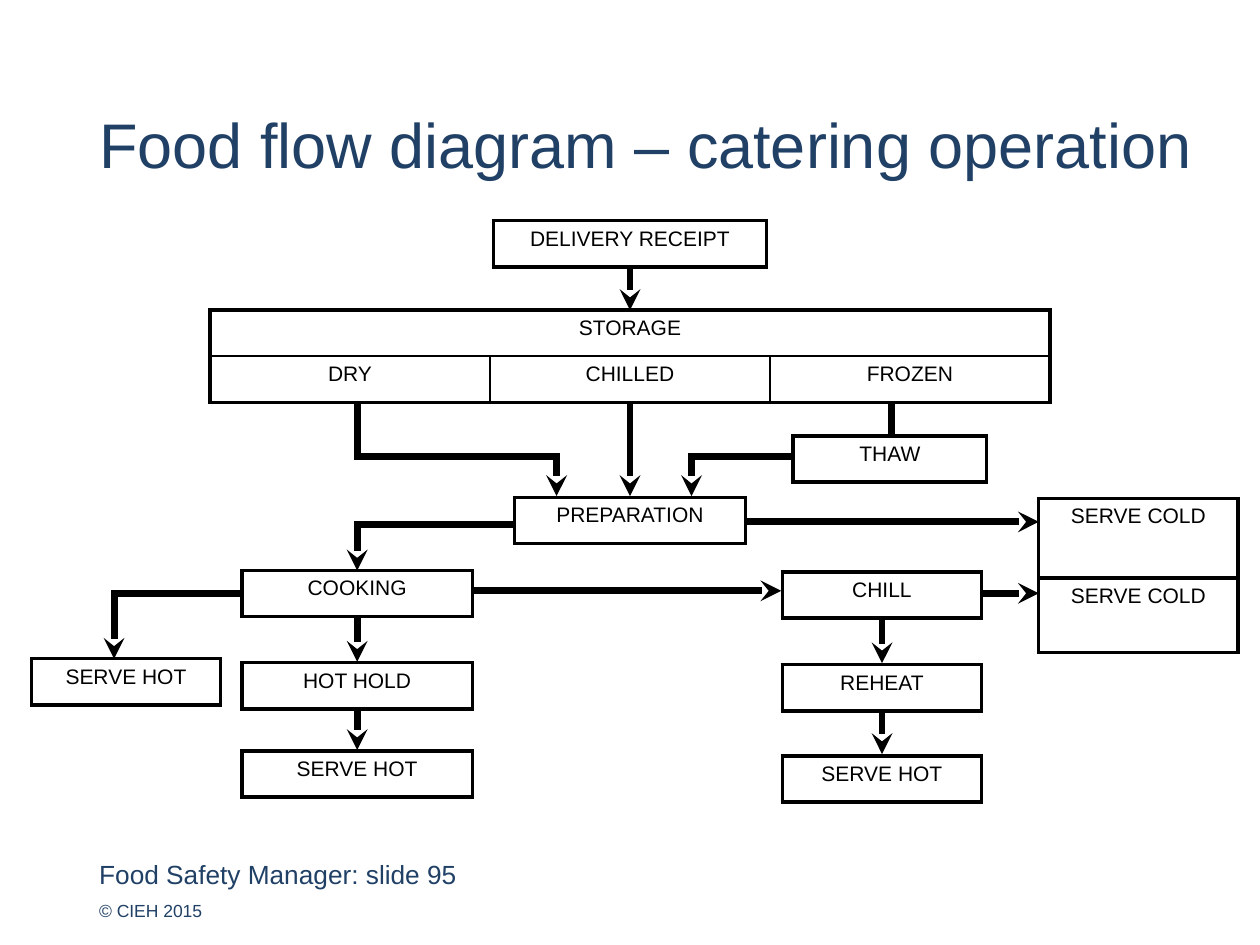
"""Build the food flow diagram slide for a catering operation."""
from dataclasses import dataclass
from itertools import pairwise

from lxml import etree
from pptx import Presentation
from pptx.dml.color import RGBColor
from pptx.enum.shapes import MSO_CONNECTOR
from pptx.enum.text import MSO_ANCHOR, PP_ALIGN
from pptx.oxml.ns import qn
from pptx.util import Cm, Pt

STRAIGHT = MSO_CONNECTOR.STRAIGHT
TOP, MIDDLE = MSO_ANCHOR.TOP, MSO_ANCHOR.MIDDLE
LEFT, CENTER = PP_ALIGN.LEFT, PP_ALIGN.CENTER


@dataclass(frozen=True)
class Theme:
    font: str = "Arial"
    navy: str = "204066"
    ink: str = "000000"
    paper: str = "FFFFFF"
    title: int = 36
    footer: int = 15
    small: int = 10
    label: int = 12
    flow: float = 4
    frame: float = 2.25
    divider: float = 1


THEME = Theme()

HEADINGS = [
    ("Food Safety Manager: slide 95", 17.3, 8.3, 0.64, THEME.footer, TOP),
    ("© CIEH 2015", 18.14, 2.7, 0.6, THEME.small, TOP),
    ("Food flow diagram – catering operation", 2.0, 22.66, 1.78, THEME.title, MIDDLE),
]
HEADING_LEFT = 2.0

ROW = 0.93
CENTRE_X, COOKING_X, CHILL_X = 12.7, 7.2, 17.78
STORAGE_TOP, PREPARATION_TOP = 6.25, 10.03
STORAGE_FOOT = STORAGE_TOP + 2 * ROW
STORAGE_CENTRE = (CENTRE_X, STORAGE_TOP, 16.93)
SERVE_COLD_X, SERVE_COLD_LEFT = 22.95, 20.94

STEPS = [
    ("DELIVERY RECEIPT", CENTRE_X, 4.45, 5.5, ROW),
    ("THAW", 17.94, 8.79, 3.9, ROW),
    ("PREPARATION", CENTRE_X, PREPARATION_TOP, 4.65, ROW),
    ("COOKING", COOKING_X, 11.5, 4.65, ROW),
    ("HOT HOLD", COOKING_X, 13.36, 4.65, ROW),
    ("SERVE HOT", COOKING_X, 15.14, 4.65, ROW),
    ("SERVE HOT", 2.54, 13.28, 3.8, ROW),
    ("CHILL", CHILL_X, 11.53, 4.02, ROW),
    ("REHEAT", CHILL_X, 13.4, 4.02, ROW),
    ("SERVE HOT", CHILL_X, 15.24, 4.02, ROW),
    ("SERVE COLD", SERVE_COLD_X, 11.65, 4.02, 1.5),
    ("SERVE COLD", SERVE_COLD_X, 10.05, 4.02, 1.6),
]
STORAGE = [["STORAGE"], ["DRY", "CHILLED", "FROZEN"]]

ARROWS = [
    [(CENTRE_X, 5.38), (CENTRE_X, STORAGE_TOP)],
    [(CENTRE_X, STORAGE_FOOT), (CENTRE_X, 10.0)],
    [(COOKING_X, STORAGE_FOOT), (COOKING_X, 9.2), (11.22, 9.2), (11.22, 10.0)],
    [(16.0, 9.2), (13.94, 9.2), (13.94, 10.0)],
    [(10.4, 10.57), (COOKING_X, 10.57), (COOKING_X, 11.5)],
    [(15.03, 10.52), (SERVE_COLD_LEFT, 10.52)],
    [(4.9, 11.96), (2.3, 11.96), (2.3, 13.28)],
    [(9.54, 11.91), (15.75, 11.91)],
    [(19.8, 11.96), (SERVE_COLD_LEFT, 11.96)],
    [(COOKING_X, 12.46), (COOKING_X, 13.34)],
    [(COOKING_X, 14.27), (COOKING_X, 15.12)],
    [(CHILL_X, 12.47), (CHILL_X, 13.37)],
    [(CHILL_X, 14.33), (CHILL_X, 15.2)],
]
PLAIN_LINES = [[(17.98, STORAGE_FOOT), (17.98, 8.79)]]


def write(holder, text, size=THEME.label, color=THEME.ink, align=CENTER):
    paragraph = holder.paragraphs[0]
    paragraph.alignment = align
    run = paragraph.add_run()
    run.text = text
    run.font.name = THEME.font
    run.font.size = Pt(size)
    run.font.color.rgb = RGBColor.from_string(color)


def add_heading(slide, text, top, width, height, size, anchor):
    box = slide.shapes.add_textbox(Cm(HEADING_LEFT), Cm(top), Cm(width), Cm(height))
    frame = box.text_frame
    frame.margin_left = frame.margin_right = frame.margin_top = frame.margin_bottom = 0
    frame.word_wrap = True
    frame.vertical_anchor = anchor
    write(frame, text, size=size, color=THEME.navy, align=LEFT)


def add_flow(slide, points, arrow):
    segments = list(pairwise(points))
    for index, (start, end) in enumerate(segments):
        connector = slide.shapes.add_connector(STRAIGHT, *map(Cm, start + end))
        connector.line.width = Pt(THEME.flow)
        connector.line.color.rgb = RGBColor.from_string(THEME.ink)
        outline = connector.line._get_or_add_ln()
        if arrow and index == len(segments) - 1:
            etree.SubElement(outline, qn("a:tailEnd"), type="stealth")
        else:
            outline.set("cap", "sq")
        etree.SubElement(connector._element.spPr, qn("a:effectLst"))


def format_cell(cell, edges):
    properties = cell._tc.get_or_add_tcPr()
    for side in "LRTB":
        border = etree.SubElement(properties, qn(f"a:ln{side}"), w=str(Pt(edges[side])))
        paint = etree.SubElement(border, qn("a:solidFill"))
        etree.SubElement(paint, qn("a:srgbClr"), val=THEME.ink)
    cell.fill.solid()
    cell.fill.fore_color.rgb = RGBColor.from_string(THEME.paper)


def add_step_table(slide, labels, centre, top, width, row_height):
    rows, columns = len(labels), max(map(len, labels))
    table = slide.shapes.add_table(
        rows, columns, Cm(centre - width / 2), Cm(top), Cm(width), Cm(row_height * rows)
    ).table
    table.first_row = table.horz_banding = False
    for row, names in enumerate(labels):
        span = columns // len(names)
        for column in range(columns):
            first = column - column % span
            outer = {
                "L": first == 0,
                "R": first + span == columns,
                "T": row == 0,
                "B": row == rows - 1,
            }
            edges = {side: THEME.frame if rim else THEME.divider for side, rim in outer.items()}
            format_cell(table.cell(row, column), edges)
        for index, name in enumerate(names):
            cell = table.cell(row, index * span)
            if span > 1:
                cell.merge(table.cell(row, (index + 1) * span - 1))
            write(cell.text_frame, name)


def main():
    deck = Presentation()
    deck.slide_width, deck.slide_height = Cm(25.4), Cm(19.05)
    slide = deck.slides.add_slide(deck.slide_layouts[6])
    for heading in HEADINGS:
        add_heading(slide, *heading)
    for points in ARROWS:
        add_flow(slide, points, arrow=True)
    for points in PLAIN_LINES:
        add_flow(slide, points, arrow=False)
    add_step_table(slide, STORAGE, *STORAGE_CENTRE, ROW)
    for name, *place in STEPS:
        add_step_table(slide, [[name]], *place)
    deck.save("out.pptx")


if __name__ == "__main__":
    main()
